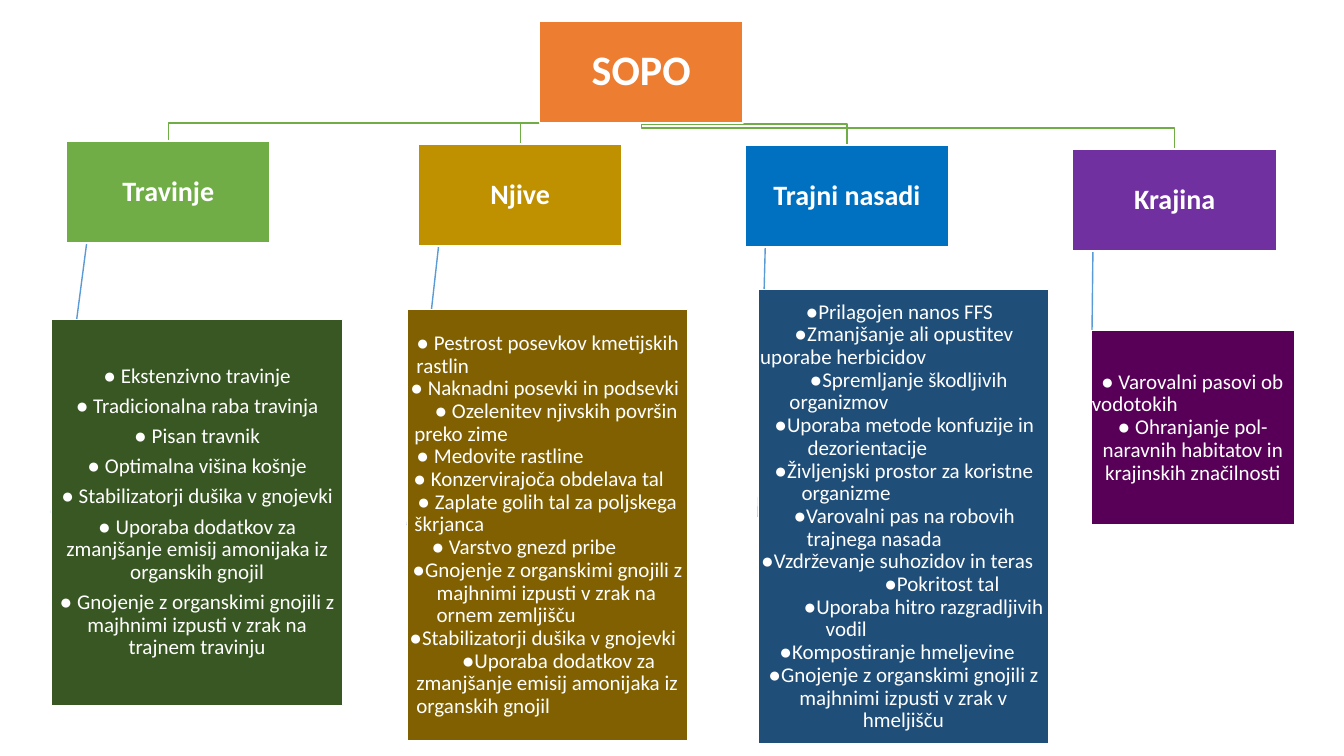
from pptx import Presentation
from pptx.dml.color import RGBColor
from pptx.enum.shapes import MSO_CONNECTOR, MSO_SHAPE
from pptx.enum.text import MSO_ANCHOR, MSO_AUTO_SIZE, PP_ALIGN
from pptx.oxml.ns import qn
from pptx.util import Inches, Pt
from lxml import etree

COLORS = {
    "white": "FFFFFF", "root": "ED7D31", "branch": "70AD47", "stem": "5B9BD5",
    "grass": "70AD47", "grass_dark": "385723",
    "field": "BF9000", "field_dark": "806000",
    "orchard": "0070C0", "orchard_dark": "1F4E79",
    "landscape": "7030A0", "landscape_dark": "580058",
}
HEAD_W, HEAD_H = 2.02, 1.01
ROOT_X, ROOT_Y = 5.35, 0.21
ROOT_MID, ROOT_BOTTOM = ROOT_X + HEAD_W / 2, ROOT_Y + HEAD_H

# fmt: measures = (text, first-line indent, hanging indent); None centres the line
SECTIONS = [
    ("Travinje", "grass", (0.66, 1.4), (0.51, 3.17, 2.89, 3.83), 5.25, [
        ("● Ekstenzivno travinje", None, None),
        ("● Tradicionalna raba travinja", None, None),
        ("● Pisan travnik", None, None),
        ("● Optimalna višina košnje", None, None),
        ("● Stabilizatorji dušika v gnojevki", None, None),
        ("● Uporaba dodatkov za zmanjšanje emisij amonijaka iz organskih gnojil", None, None),
        ("● Gnojenje z organskimi gnojili z majhnimi izpusti v zrak na trajnem travinju", None, None),
    ]),
    ("Njive", "field", (4.15, 1.43), (4.04, 3.07, 2.78, 4.28), 0, [
        ("● Pestrost posevkov kmetijskih rastlin", 0.08, 0.08),
        ("● Naknadni posevki in podsevki", 0.02, 0.02),
        ("● Ozelenitev njivskih površin preko zime", 0.26, 0.06),
        ("● Medovite rastline", 0.08, 0.08),
        ("● Konzervirajoča obdelava tal", 0.05, 0.05),
        ("● Zaplate golih tal za poljskega škrjanca", 0.09, 0.06),
        ("● Varstvo gnezd pribe", 0.23, 0.23),
        ("●Gnojenje z organskimi gnojili z majhnimi izpusti v zrak na ornem zemljišču", 0.04, 0.28),
        ("●Stabilizatorji dušika v gnojevki", 0.01, 0.01),
        ("●Uporaba dodatkov za zmanjšanje emisij amonijaka iz organskih gnojil", 0.53, 0.08),
    ]),
    ("Trajni nasadi", "orchard", (7.39, 1.44), (7.52, 2.87, 2.88, 4.51), 0, [
        ("●Prilagojen nanos FFS", 0.46, 0.46),
        ("●Zmanjšanje ali opustitev uporabe herbicidov", 0.35, 0.01),
        ("●Spremljanje škodljivih organizmov", 0.5, 0.3),
        ("●Uporaba metode konfuzije in dezorientacije", 0.15, 0.48),
        ("●Življenjski prostor za koristne organizme", 0.15, 0.42),
        ("●Varovalni pas na robovih trajnega nasada", 0.34, 0.47),
        ("●Vzdrževanje suhozidov in teras", 0.02, 0.02),
        ("●Pokritost tal", 1.24, 1.24),
        ("●Uporaba hitro razgradljivih vodil", 0.44, 0.66),
        ("●Kompostiranje hmeljevine", 0.2, 0.2),
        ("●Gnojenje z organskimi gnojili z majhnimi izpusti v zrak v hmeljišču", None, None),
    ]),
    ("Krajina", "landscape", (10.64, 1.48), (10.82, 3.28, 2.02, 1.93), 0, [
        ("● Varovalni pasovi ob vodotokih", 0.09, 0),
        ("● Ohranjanje pol-naravnih habitatov in krajinskih značilnosti", None, None),
    ]),
]


def style_box(box, color, inset):
    box.fill.solid()
    box.fill.fore_color.rgb = RGBColor.from_string(COLORS[color])
    box.line.color.rgb = RGBColor.from_string(COLORS["white"])
    box.line.width = Pt(1)
    frame = box.text_frame
    frame.word_wrap = True
    frame.auto_size = MSO_AUTO_SIZE.NONE
    frame.vertical_anchor = MSO_ANCHOR.MIDDLE
    frame.margin_left = frame.margin_right = Inches(inset)
    frame.margin_top = frame.margin_bottom = Inches(inset)
    return frame


def style_paragraph(paragraph, size, bold=False):
    paragraph.alignment = PP_ALIGN.CENTER
    paragraph.line_spacing = 0.9
    paragraph.space_before = Pt(0)
    paragraph.font.size = Pt(size)
    paragraph.font.bold = bold
    paragraph.font.name = "Calibri"
    paragraph.font.color.rgb = RGBColor.from_string(COLORS["white"])


prs = Presentation()
prs.slide_width, prs.slide_height = Inches(13.33), Inches(7.5)
slide = prs.slides.add_slide(prs.slide_layouts[5])
shapes = slide.shapes

for heading, color, (head_x, head_y), (list_x, list_y, list_w, list_h), gap, measures in SECTIONS:
    stem = shapes.add_connector(
        MSO_CONNECTOR.STRAIGHT, Inches(head_x + 0.2), Inches(head_y + HEAD_H),
        Inches(list_x), Inches(list_y + list_h / 2))
    stem.line.color.rgb = RGBColor.from_string(COLORS["stem"])
    stem.line.width = Pt(1)
    etree.SubElement(stem._element.spPr, qn("a:effectLst"))

    bend_y = max(ROOT_BOTTOM, head_y - 0.21)
    head_mid = head_x + HEAD_W / 2
    route = [(ROOT_MID, bend_y), (head_mid, bend_y), (head_mid, head_y)]
    builder = shapes.build_freeform(Inches(ROOT_MID), Inches(ROOT_BOTTOM))
    builder.add_line_segments([(Inches(x), Inches(y)) for x, y in route], close=False)
    branch = builder.convert_to_shape()
    branch.shadow.inherit = False
    branch.fill.background()
    branch.line.color.rgb = RGBColor.from_string(COLORS["branch"])
    branch.line.width = Pt(1)

root = shapes.title
root.left, root.top = Inches(ROOT_X), Inches(ROOT_Y)
root.width, root.height = Inches(HEAD_W), Inches(HEAD_H)
root_frame = style_box(root, "root", 0.02)
root_frame.text = "SOPO"
style_paragraph(root_frame.paragraphs[0], 30, True)
shapes._spTree.append(root._element)

for heading, color, (head_x, head_y), list_bounds, gap, measures in SECTIONS:
    head = shapes.add_shape(
        MSO_SHAPE.RECTANGLE, Inches(head_x), Inches(head_y), Inches(HEAD_W), Inches(HEAD_H))
    head.shadow.inherit = False
    head_frame = style_box(head, color, 0.01)
    head_frame.text = heading
    style_paragraph(head_frame.paragraphs[0], 20, True)

    measure_list = shapes.add_shape(MSO_SHAPE.RECTANGLE, *[Inches(v) for v in list_bounds])
    measure_list.shadow.inherit = False
    list_frame = style_box(measure_list, color + "_dark", 0.01)
    for index, (measure, first, hanging) in enumerate(measures):
        paragraph = list_frame.add_paragraph() if index else list_frame.paragraphs[0]
        style_paragraph(paragraph, 15)
        paragraph.space_after = Pt(gap)
        if first is not None:
            paragraph.alignment = PP_ALIGN.LEFT
            properties = paragraph._p.get_or_add_pPr()
            properties.set("marL", str(Inches(hanging)))
            properties.set("indent", str(Inches(first) - Inches(hanging)))
        bullet = paragraph.add_run()
        bullet.text = measure[0]
        bullet.font.name = "Times New Roman"
        paragraph.add_run().text = measure[1:]

prs.save("out.pptx")
